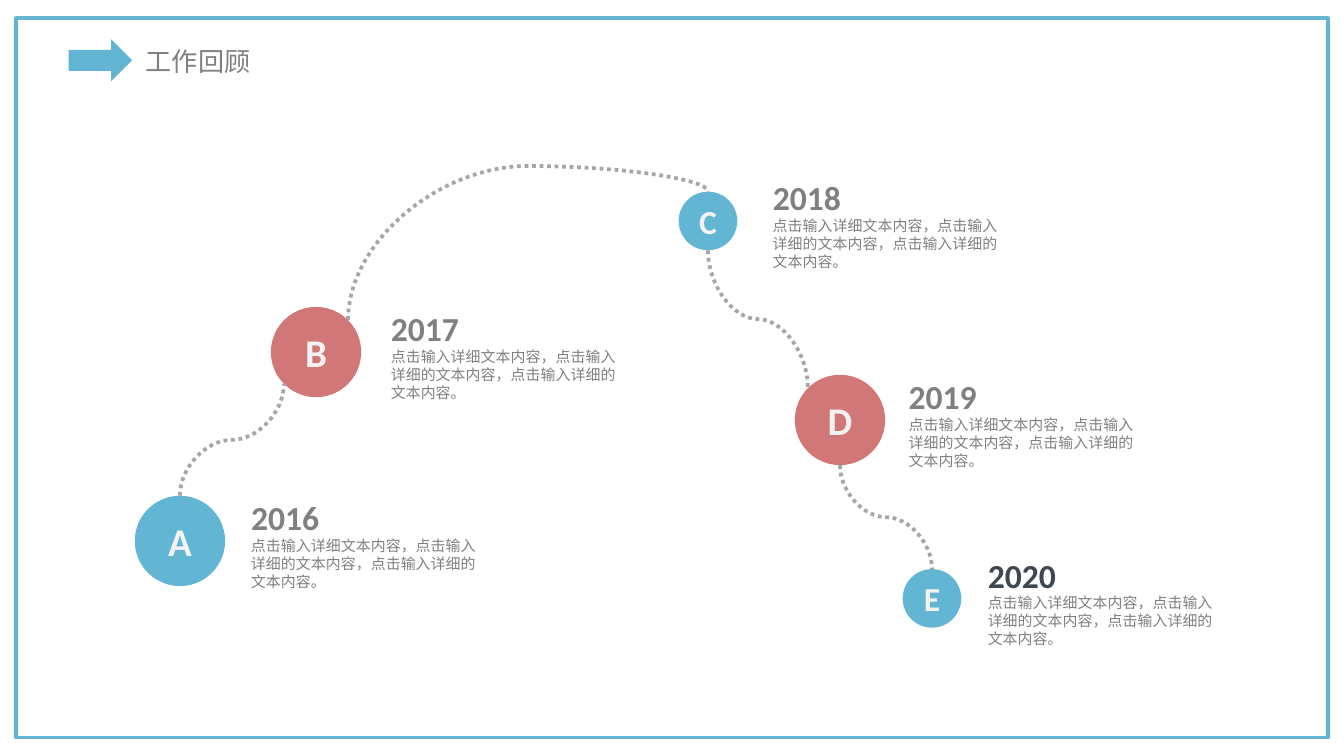
from lxml import etree
from pptx import Presentation
from pptx import util as u
from pptx.dml.color import RGBColor
from pptx.enum import dml, shapes, text
from pptx.oxml.ns import qn

COLORS = {"blue": "62B6D4", "red": "D17777", "gray": "808080", "slate": "404652",
          "dots": "A6A6A6", "pale": "F2F2F2", "white": "FFFFFF"}
LATIN, CHINESE = "Calibri", "Noto Sans CJK SC"
DETAIL = "点击输入详细文本内容，点击输入详细的文本内容，点击输入详细的文本内容。"
DIAGONAL = 0.71


class Deck:
    """Timeline style and the slide being drawn."""

    def __init__(self, slide):
        self.shapes = slide.shapes

    def color(self, name):
        return RGBColor.from_string(COLORS[name])

    def fill_in(self, frame, words, size, color, font, bold=False):
        paragraph = frame.paragraphs[0]
        paragraph.text = words
        style = paragraph.font
        style.size, style.bold, style.name = u.Pt(size), bold, font
        style.color.rgb = self.color(color)
        defaults = paragraph._p.pPr.find(qn("a:defRPr"))
        etree.SubElement(defaults, qn("a:ea"), typeface=font)
        return paragraph

    def shape(self, kind, box, fill, outline=None):
        figure = self.shapes.add_shape(kind, *map(u.Pt, box))
        figure.shadow.inherit = False
        figure.fill.solid()
        figure.fill.fore_color.rgb = self.color(fill)
        if outline:
            figure.line.color.rgb = self.color(outline)
            figure.line.width = u.Pt(2)
        else:
            figure.line.fill.background()
        return figure

    def label(self, words, box, size, color, font, bold=False, wrap=False):
        frame = self.shapes.add_textbox(*map(u.Pt, box)).text_frame
        frame.word_wrap = wrap
        frame.auto_size = text.MSO_AUTO_SIZE.SHAPE_TO_FIT_TEXT
        self.fill_in(frame, words, size, color, font, bold)

    def milestone(self, letter, x, y, radius, size, fill):
        box = (x - radius, y - radius, 2 * radius, 2 * radius)
        frame = self.shape(shapes.MSO_SHAPE.OVAL, box, fill).text_frame
        frame.margin_left = frame.margin_right = u.Pt(5)
        frame.margin_top = frame.margin_bottom = u.Pt(2.9)
        frame.vertical_anchor = text.MSO_ANCHOR.MIDDLE
        initial = self.fill_in(frame, letter, size, "pale", LATIN, True)
        initial.alignment = text.PP_ALIGN.CENTER

    def entry(self, year, left, top, color):
        self.label(year, (left, top, 51.1, 28.8), 18, color, LATIN, True)
        self.label(DETAIL, (left, top + 20.9, 141.1, 36), 8, "gray", CHINESE, wrap=True)

    def curve(self, start, end, bend=0.5):
        (x1, y1), (x2, y2) = start, end
        middle_x, middle_y = (x1 + x2) / 2, (y1 + y2) / 2
        dx, dy = (x2 - x1) / 2, (y2 - y1) / 2
        turned = (middle_x - dy, middle_y + dx, middle_x + dy, middle_y - dx)
        link = self.shapes.add_connector(shapes.MSO_CONNECTOR.CURVE, *map(u.Pt, turned))
        link.line.color.rgb = self.color("dots")
        link.line.width = u.Pt(2)
        link.line.dash_style = dml.MSO_LINE.ROUND_DOT
        properties = link._element.spPr
        properties.find(qn("a:xfrm")).set("rot", str(90 * 60000))
        guides = properties.find(qn("a:prstGeom")).get_or_add_avLst()
        etree.SubElement(guides, qn("a:gd"), name="adj1", fmla=f"val {round(bend * 100000)}")
        etree.SubElement(properties, qn("a:effectLst"))


def rim(milestone, across, down):
    _, x, y, radius = milestone[:4]
    return x + across * radius, y + down * radius


def main():
    presentation = Presentation()
    presentation.slide_width, presentation.slide_height = u.Pt(720), u.Pt(405)
    deck = Deck(presentation.slides.add_slide(presentation.slide_layouts[6]))

    deck.shape(shapes.MSO_SHAPE.RECTANGLE, (8.6, 9.8, 702.8, 385.4), "white", "blue")
    deck.label("工作回顾", (71, 21, 74.4, 24.3), 14, "gray", CHINESE)
    deck.shape(shapes.MSO_SHAPE.RIGHT_ARROW, (36.7, 21.1, 34.1, 22.5), "blue")

    milestones = [
        ("A", 96.4, 289.8, 24.2, 21, "blue"),
        ("B", 169.3, 188.6, 24.2, 21, "red"),
        ("C", 379.3, 118.4, 15.7, 18, "blue"),
        ("D", 450, 225, 24.2, 21, "red"),
        ("E", 499.3, 320.6, 15.7, 18, "blue"),
    ]
    entries = [("2016", 127.4, "gray"), ("2017", 202.3, "gray"), ("2018", 406.9, "gray"),
               ("2019", 479.7, "gray"), ("2020", 522.1, "slate")]
    for milestone, (year, left, color) in zip(milestones, entries):
        deck.milestone(*milestone)
        deck.entry(year, left, milestone[2] - 26.9, color)

    a, b, c, d, e = milestones
    deck.curve(rim(a, 0, -1), rim(b, -DIAGONAL, DIAGONAL))
    deck.curve(rim(b, DIAGONAL, -DIAGONAL), rim(c, 0, -1), 1.2)
    deck.curve(rim(c, 0, 1), rim(d, -DIAGONAL, -DIAGONAL))
    deck.curve(rim(d, 0, 1), rim(e, 0, -1))
    presentation.save("out.pptx")


if __name__ == "__main__":
    main()
